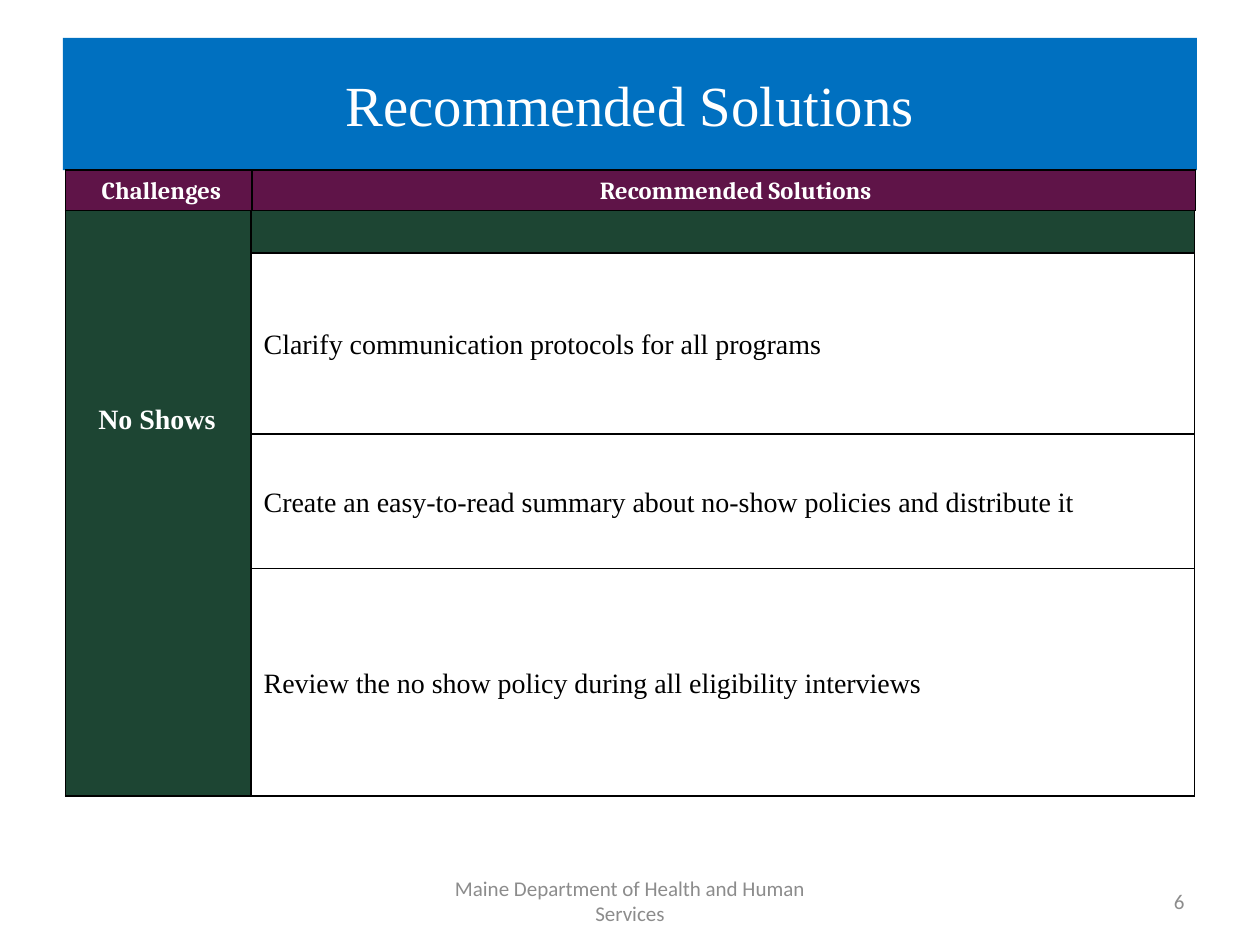
import pptx
import pptx.dml.color
import pptx.enum.shapes
import pptx.enum.text
import pptx.util
from dataclasses import dataclass
from lxml import etree

Pt = pptx.util.Pt
Align = pptx.enum.text.PP_ALIGN
Anchor = pptx.enum.text.MSO_ANCHOR
NS = "http://schemas.openxmlformats.org/drawingml/2006/main"


@dataclass(frozen=True)
class Theme:
    blue: str = "0070C0"
    plum: str = "5F1448"
    green: str = "1D4533"
    white: str = "FFFFFF"
    black: str = "000000"
    gray: str = "8C8C8C"
    serif: str = "Times New Roman"
    sans: str = "Calibri"
    label: str = "Cambria"
    title: float = 32.4
    body: float = 16
    head: float = 14
    small: float = 12


def rgb(color):
    return pptx.dml.color.RGBColor.from_string(color)


class Deck:
    def __init__(self, theme):
        self.theme = theme
        self.file = pptx.Presentation()
        self.file.slide_width, self.file.slide_height = Pt(720), Pt(540)
        self.slide = self.file.slides.add_slide(self.file.slide_layouts[6])

    def words(self, frame, text, font, size, color, align, bold=False, lead=1):
        frame.text = text
        frame.word_wrap = True
        para = frame.paragraphs[0]
        para.alignment, para.line_spacing = align, lead
        for run in para.runs:
            run.font.name, run.font.size = font, Pt(size)
            run.font.bold = bold
            run.font.color.rgb = rgb(color)

    def banner(self, text, *box):
        t = self.theme
        kind = pptx.enum.shapes.MSO_SHAPE.RECTANGLE
        shape = self.slide.shapes.add_shape(kind, *map(Pt, box))
        shape.shadow.inherit = False
        shape.fill.solid()
        shape.fill.fore_color.rgb = rgb(t.blue)
        shape.line.fill.background()
        shape.text_frame.vertical_anchor = Anchor.MIDDLE
        self.words(shape.text_frame, text, t.serif, t.title, t.white, Align.CENTER)

    def note(self, text, align, *box):
        t = self.theme
        frame = self.slide.shapes.add_textbox(*map(Pt, box)).text_frame
        frame.vertical_anchor = Anchor.MIDDLE
        self.words(frame, text, t.sans, t.small, t.gray, align)

    def grid(self, left, top, cols, rows):
        box = map(Pt, (left, top, sum(cols), sum(rows)))
        table = self.slide.shapes.add_table(len(rows), len(cols), *box).table
        table.first_row = table.horz_banding = False
        for part, size in zip(table.columns, cols):
            part.width = Pt(size)
        for part, size in zip(table.rows, rows):
            part.height = Pt(size)
        for cell in table.iter_cells():
            self.edge(cell)
            cell.fill.background()
            cell.vertical_anchor = Anchor.MIDDLE
            cell.margin_left = cell.margin_right = Pt(5)
            cell.margin_top = cell.margin_bottom = 0
            cell.text_frame.paragraphs[0].font.size = Pt(self.theme.small)
        return table

    def edge(self, cell):
        props = cell._tc.get_or_add_tcPr()
        for side in ("lnL", "lnR", "lnT", "lnB"):
            line = etree.SubElement(props, f"{{{NS}}}{side}", w=str(Pt(1)))
            fill = etree.SubElement(line, f"{{{NS}}}solidFill")
            etree.SubElement(fill, f"{{{NS}}}srgbClr", val=self.theme.black)

    def paint(self, cell, color):
        cell.fill.solid()
        cell.fill.fore_color.rgb = rgb(color)

    def cell(self, cell, text, font, size, color, align, bold, indent):
        cell.margin_left = Pt(5 + indent)
        self.words(cell.text_frame, text, font, size, color, align, bold, 1.1)


def main():
    t = Theme()
    deck = Deck(t)

    # Footer and page number
    deck.note("Maine Department of Health and Human Services", Align.CENTER,
              246, 500.5, 228, 28.75)
    deck.note("6", Align.RIGHT, 516, 500.5, 168, 28.75)

    # Title
    deck.banner("Recommended Solutions", 36, 21.6, 648, 75.6)

    # Challenge and its solutions
    body = deck.grid(37.5, 120.2, (106, 539.2), (24.5, 103.2, 77, 129))
    topic = body.cell(0, 0)
    topic.merge(body.cell(3, 0))
    deck.paint(topic, t.green)
    deck.paint(body.cell(0, 1), t.green)
    topic.vertical_anchor = Anchor.TOP
    topic.margin_top = Pt(109)
    deck.cell(topic, "No Shows", t.serif, t.body, t.white, Align.LEFT, True, 13.7)
    ideas = (
        "Clarify communication protocols for all programs",
        "Create an easy-to-read summary about no-show policies and distribute it",
        "Review the no show policy during all eligibility interviews",
    )
    for row, text in enumerate(ideas, 1):
        deck.cell(body.cell(row, 1), text, t.serif, t.body, t.black,
                  Align.LEFT, False, 2.2)

    # Column heads
    head = deck.grid(37.5, 97.2, (106.5, 539.2), (23,))
    for col, (text, indent) in enumerate(
            (("Challenges", 2.9), ("Recommended Solutions", 13.7))):
        cell = head.cell(0, col)
        deck.paint(cell, t.plum)
        deck.cell(cell, text, t.label, t.head, t.white, Align.CENTER, True, indent)

    deck.file.save("out.pptx")


if __name__ == "__main__":
    main()
